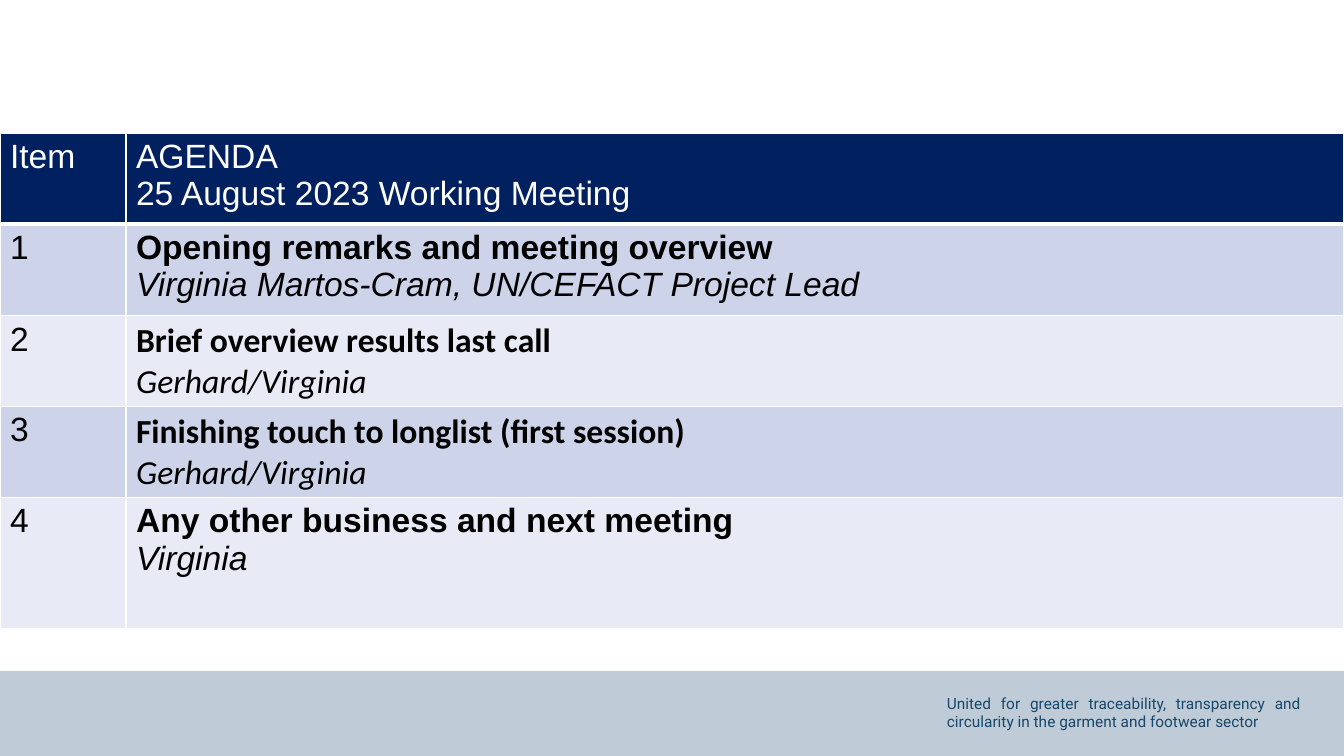
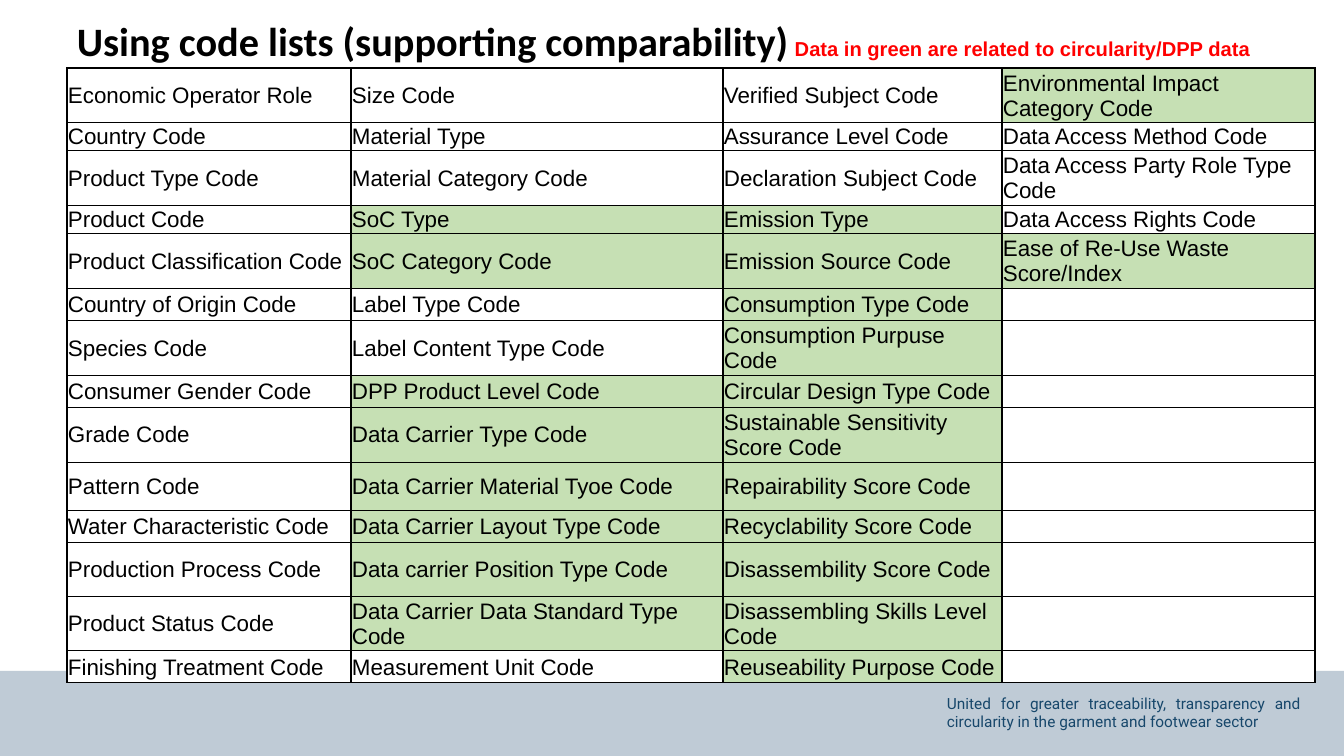
from lxml.etree import SubElement
from pptx import Presentation
from pptx.dml.color import RGBColor
from pptx.enum.shapes import MSO_SHAPE
from pptx.enum.text import MSO_ANCHOR, PP_ALIGN
from pptx.oxml.ns import qn
from pptx.util import Emu, Pt

WHITE = RGBColor(0xFF, 0xFF, 0xFF)
BLACK = RGBColor(0x00, 0x00, 0x00)
RED = RGBColor(0xFF, 0x00, 0x00)
NAVY = RGBColor(0x00, 0x20, 0x60)
BAND_GREY = RGBColor(0xBF, 0xCB, 0xD6)
FOOTER_BLUE = RGBColor(0x17, 0x47, 0x6B)
ROW_DARK = RGBColor(0xCD, 0xD4, 0xEA)
ROW_LIGHT = RGBColor(0xE8, 0xEB, 0xF5)
GREEN = RGBColor(0xC6, 0xE0, 0xB4)

SLIDE_W, SLIDE_H = 1344, 756
PX = 914400 / 100.8


def px(*lengths):
    return [Emu(round(length * PX)) for length in lengths]


def style_cell(cell, fill, line, top=1, bottom=1):
    """Fill a cell and draw its four borders, widths in points."""
    properties = cell._tc.get_or_add_tcPr()
    for side, width in (("L", 1), ("R", 1), ("T", top), ("B", bottom)):
        border = SubElement(properties, qn(f"a:ln{side}"), w=str(Pt(width)))
        solid = SubElement(border, qn("a:solidFill"))
        SubElement(solid, qn("a:srgbClr"), val=str(line))
    cell.fill.solid()
    cell.fill.fore_color.rgb = fill


prs = Presentation()
prs.slide_width, prs.slide_height = px(SLIDE_W, SLIDE_H)
agenda_slide, codes_slide = [
    prs.slides.add_slide(prs.slide_layouts[6]) for _ in range(2)
]

# Footer band and motto on both slides
for slide in (agenda_slide, codes_slide):
    band = slide.shapes.add_shape(MSO_SHAPE.RECTANGLE, *px(0, 671, SLIDE_W, 85))
    band.shadow.inherit = False
    band.fill.solid()
    band.fill.fore_color.rgb = BAND_GREY
    band.line.fill.background()

    motto = slide.shapes.add_textbox(*px(937, 689, 374, 47)).text_frame
    motto.word_wrap = True
    motto.text = ("United for greater traceability, transparency and "
                  "circularity in the garment and footwear sector")
    motto.paragraphs[0].alignment = PP_ALIGN.JUSTIFY
    motto_font = motto.paragraphs[0].runs[0].font
    motto_font.name, motto_font.size = "Roboto", Pt(11)
    motto_font.color.rgb = FOOTER_BLUE

# Slide 1: agenda, as item, topic, second line, font of the topic
agenda_items = [
    ("Item", "AGENDA", "25 August 2023 Working Meeting", "Arial"),
    ("1", "Opening remarks and meeting overview",
     "Virginia Martos-Cram, UN/CEFACT Project Lead", "Arial"),
    ("2", "Brief overview results last call", "Gerhard/Virginia", "Calibri"),
    ("3", "Finishing touch to longlist (first session)", "Gerhard/Virginia",
     "Calibri"),
    ("4", "Any other business and next meeting", "Virginia", "Arial"),
]
agenda_widths = [126, 1218]
agenda_heights = [89, 92, 90, 91, 131]

agenda = agenda_slide.shapes.add_table(
    len(agenda_items), 2,
    *px(0, 133, sum(agenda_widths), sum(agenda_heights))).table
agenda.horz_banding = False
for column, width in zip(agenda.columns, px(*agenda_widths)):
    column.width = width
for row, height in zip(agenda.rows, px(*agenda_heights)):
    row.height = height

for r, (item, topic, detail, topic_font) in enumerate(agenda_items):
    header = r == 0
    fill = NAVY if header else (ROW_LIGHT, ROW_DARK)[r % 2]
    cells = (agenda.cell(r, 0), item, "Arial"), \
        (agenda.cell(r, 1), f"{topic}\n{detail}", topic_font)
    for c, (cell, text, font_name) in enumerate(cells):
        cell.text_frame.text = text
        style_cell(cell, fill, WHITE,
                   top=3 if r == 1 else 1, bottom=3 if header else 1)
        for line_no, paragraph in enumerate(cell.text_frame.paragraphs):
            font = paragraph.runs[0].font
            font.name, font.size = font_name, Pt(24)
            font.color.rgb = WHITE if header else BLACK
            font.bold = not header and c == 1 and line_no == 0
            font.italic = not header and line_no == 1

# Slide 2: code lists, row by row
code_rows = [
    ("Economic Operator Role", "Size Code", "Verified Subject Code",
     "Environmental Impact Category Code"),
    ("Country Code", "Material Type", "Assurance Level Code",
     "Data Access Method Code"),
    ("Product Type Code", "Material Category Code", "Declaration Subject Code",
     "Data Access Party Role Type Code"),
    ("Product Code", "SoC Type", "Emission Type", "Data Access Rights Code"),
    ("Product Classification Code", "SoC Category Code",
     "Emission Source Code", "Ease of Re-Use Waste Score/Index"),
    ("Country of Origin Code", "Label Type Code", "Consumption Type Code", ""),
    ("Species Code", "Label Content Type Code", "Consumption Purpuse Code", ""),
    ("Consumer Gender Code", "DPP Product Level Code",
     "Circular Design Type Code", ""),
    ("Grade Code", "Data Carrier Type Code",
     "Sustainable Sensitivity Score Code", ""),
    ("Pattern Code", "Data Carrier Material Tyoe Code",
     "Repairability Score Code", ""),
    ("Water Characteristic Code", "Data Carrier Layout Type Code",
     "Recyclability Score Code", ""),
    ("Production Process Code", "Data carrier Position Type Code",
     "Disassembility Score Code", ""),
    ("Product Status Code", "Data Carrier Data Standard Type Code",
     "Disassembling Skills Level Code", ""),
    ("Finishing Treatment Code", "Measurement Unit Code",
     "Reuseability Purpose Code", ""),
]
# Rows related to circularity, for each column
green_rows = [(), (3, 4, *range(7, 13)), range(3, 14), (0, 4)]
code_widths = [284, 372, 279, 313]
code_heights = [54, 27, 55, 27, 55, 32, 54, 32, 55, 48, 32, 54, 54, 32]

codes = codes_slide.shapes.add_table(
    len(code_rows), len(code_widths),
    *px(67, 68, sum(code_widths), sum(code_heights))).table
codes.first_row = codes.horz_banding = False
for column, width in zip(codes.columns, px(*code_widths)):
    column.width = width
for row, height in zip(codes.rows, px(*code_heights)):
    row.height = height

for r, names in enumerate(code_rows):
    for c, name in enumerate(names):
        cell = codes.cell(r, c)
        cell.vertical_anchor = MSO_ANCHOR.MIDDLE
        (cell.margin_left, cell.margin_top,
         cell.margin_right, cell.margin_bottom) = px(1, 1, 1, 0)
        style_cell(cell, GREEN if r in green_rows[c] else WHITE, BLACK)
        cell.text_frame.text = name
        for run in cell.text_frame.paragraphs[0].runs:
            run.font.name, run.font.size = "Arial", Pt(16)
            run.font.color.rgb = BLACK

# Slide 2: title with its colour key
title = codes_slide.shapes.add_textbox(*px(67, 12, 1248, 62)).text_frame
title.word_wrap = True
title.vertical_anchor = MSO_ANCHOR.MIDDLE
title.paragraphs[0].line_spacing = 0.9
title_parts = [
    ("Using code lists (supporting comparability)", "Calibri", 28.8, BLACK),
    (" Data in green are related to circularity/DPP data", "Arial", 14.4, RED),
]
for text, font_name, size, color in title_parts:
    run = title.paragraphs[0].add_run()
    run.text = text
    run.font.name, run.font.size = font_name, Pt(size)
    run.font.bold = True
    run.font.color.rgb = color

prs.save("out.pptx")
